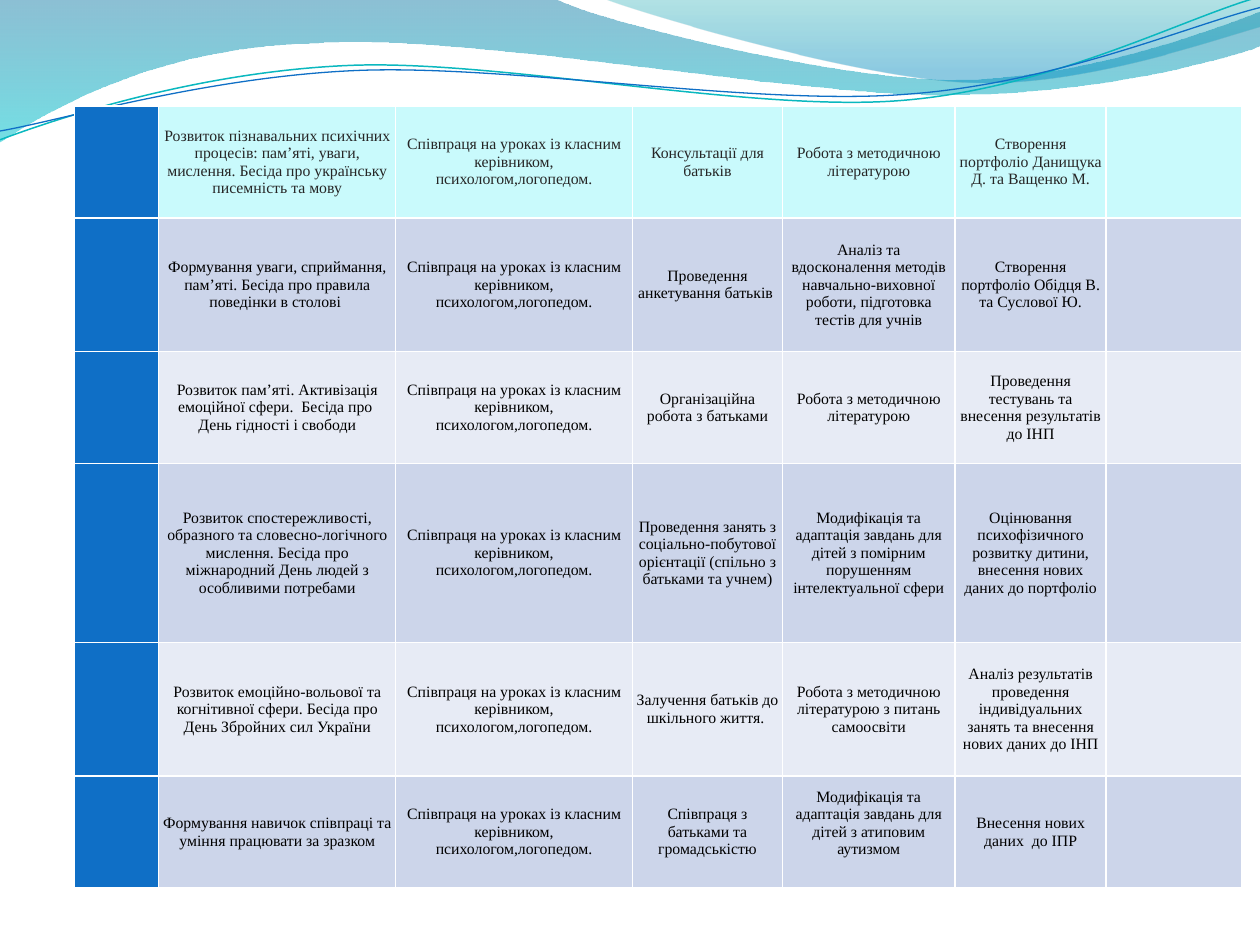
from dataclasses import dataclass
from typing import Optional

import lxml.etree
import pptx
import pptx.dml.color
import pptx.enum.text
import pptx.oxml.ns
import pptx.util

Inches = pptx.util.Inches
RGBColor = pptx.dml.color.RGBColor
qn = pptx.oxml.ns.qn
Point = tuple[float, float]

WHITE = RGBColor(0xFF, 0xFF, 0xFF)
BLACK = RGBColor(0x00, 0x00, 0x00)
DARK_GREY = RGBColor(0x26, 0x26, 0x26)
BLUE = RGBColor(0x0F, 0x6F, 0xC6)
TEAL = RGBColor(0x0A, 0xB8, 0xBF)
PALE_CYAN = RGBColor(0xC9, 0xFA, 0xFC)
BAND_DARK = RGBColor(0xCC, 0xD5, 0xEA)
BAND_LIGHT = RGBColor(0xE7, 0xEB, 0xF5)
DEEP_BLUE = RGBColor(0x00, 0x74, 0xA1)
CYAN = RGBColor(0x00, 0xC6, 0xCF)
SEA_GREEN = RGBColor(0x00, 0xA1, 0xA9)
SKY_BLUE = RGBColor(0x00, 0x8B, 0xBF)

FONT = "Times New Roman"


@dataclass
class Stop:
    position: float
    color: RGBColor
    opacity: int  # percent


@dataclass
class Wave:
    """Segments hold one point (straight) or three points (Bézier)."""
    start: Point
    segments: list[list[Point]]
    stops: Optional[list[Stop]] = None
    line_color: Optional[RGBColor] = None
    line_width: float = 0


WAVES = [
    Wave((0, 0), [
        [(4.4, -0.01)],
        [(4.76, 0.17), (6.64, 0.63), (7.58, 0.63)],
        [(8.53, 0.63), (9.58, 0.26), (10, 0.09)],
        [(10.01, 0.36)],
        [(9.83, 0.44), (8.7, 0.76), (7.46, 0.75)],
        [(6.22, 0.75), (3.82, 0.28), (2.57, 0.34)],
        [(1.29, 0.36), (0.46, 0.83), (-0.01, 1.13)],
        [(0, 0)],
    ], stops=[Stop(0, DEEP_BLUE, 45), Stop(1, CYAN, 55)]),
    Wave((4.79, -0.01), [
        [(5.09, 0.11), (6.82, 0.62), (7.69, 0.65)],
        [(8.56, 0.69), (9.61, 0.32), (10, 0.21)],
        [(10, 0)],
        [(4.79, -0.01)],
    ], stops=[Stop(0, SEA_GREEN, 30), Stop(0.8, SKY_BLUE, 45)]),
    Wave((0, 1.11), [
        [(0.48, 0.93), (1.58, 0.57), (2.77, 0.52)],
        [(3.95, 0.47), (5.93, 0.89), (7.13, 0.8)],
        [(8.33, 0.71), (9.38, 0.15), (9.98, -0.02)],
    ], line_color=TEAL, line_width=0.85),
    Wave((0, 1.04), [
        [(0.47, 0.96), (1.64, 0.61), (2.83, 0.56)],
        [(4.03, 0.51), (5.97, 0.84), (7.17, 0.75)],
        [(8.36, 0.67), (9.41, 0.21), (10, 0.06)],
    ], line_color=BLUE, line_width=0.75),
]

COLUMN_WIDTHS = [0.67, 1.88, 1.88, 1.19, 1.37, 1.2, 1.08]
ROW_HEIGHTS = [0.89, 1.06, 0.89, 1.42, 1.06, 0.89]
ROW_FILLS = [PALE_CYAN, BAND_DARK, BAND_LIGHT, BAND_DARK, BAND_LIGHT, BAND_DARK]
COOPERATION = "Співпраця на уроках із класним керівником, психологом,логопедом."

# Pupils, parents, teaching methods, records
PLAN = [
    ("Розвиток пізнавальних психічних процесів: пам’яті, уваги, мислення. "
     "Бесіда про українську писемність та мову",
     "Консультації для батьків",
     "Робота з методичною літературою",
     "Створення портфоліо Данищука Д. та Ващенко М."),
    ("Формування уваги, сприймання, пам’яті. Бесіда про правила поведінки в столові ",
     "Проведення анкетування батьків ",
     "Аналіз та вдосконалення методів навчально-виховної роботи, "
     "підготовка тестів для учнів",
     "Створення портфоліо Обідця В. та Суслової Ю."),
    ("Розвиток пам’яті. Активізація емоційної сфери.  Бесіда про  День гідності і свободи",
     "Організаційна робота з батьками",
     "Робота з методичною літературою",
     "Проведення тестувань та внесення результатів до ІНП"),
    ("Розвиток спостережливості, образного та словесно-логічного мислення. "
     "Бесіда про міжнародний День людей з особливими потребами",
     "Проведення занять з соціально-побутової орієнтації (спільно з батьками та учнем)",
     "Модифікація та адаптація завдань для дітей з помірним порушенням "
     "інтелектуальної сфери",
     "Оцінювання психофізичного розвитку дитини, внесення нових даних до портфоліо"),
    ("Розвиток емоційно-вольової та когнітивної сфери. Бесіда про День Збройних сил України",
     "Залучення батьків до шкільного життя. ",
     "Робота з методичною літературою з питань самоосвіти",
     "Аналіз результатів проведення індивідуальних занять та внесення нових даних до ІНП"),
    ("Формування навичок співпраці та уміння працювати за зразком",
     "Співпраця з батьками та громадськістю",
     "Модифікація та адаптація завдань для дітей з атиповим аутизмом",
     "Внесення нових даних  до ІПР"),
]


def bend_segments(shape: pptx.shapes.autoshape.Shape, wave: Wave) -> None:
    """Join each run of three straight steps into one Bézier segment."""
    steps = iter(list(shape._element.spPr.iter(qn("a:lnTo"))))
    for segment in wave.segments:
        first, *rest = [next(steps) for _ in segment]
        if rest:
            curve = lxml.etree.Element(qn("a:cubicBezTo"))
            first.addprevious(curve)
            for step in (first, *rest):
                curve.append(step[0])
                step.getparent().remove(step)


def draw_wave(slide: pptx.slide.Slide, wave: Wave) -> None:
    builder = slide.shapes.build_freeform(Inches(wave.start[0]), Inches(wave.start[1]))
    points = [(Inches(x), Inches(y)) for segment in wave.segments for x, y in segment]
    builder.add_line_segments(points, close=False)
    shape = builder.convert_to_shape()
    bend_segments(shape, wave)
    shape.shadow.inherit = False
    if wave.stops is None:
        shape.fill.background()
        shape.line.color.rgb = wave.line_color
        shape.line.width = pptx.util.Pt(wave.line_width)
        return
    shape.line.fill.background()
    shape.fill.gradient()
    shape.fill.gradient_angle = 270
    for gradient_stop, stop in zip(shape.fill.gradient_stops, wave.stops):
        gradient_stop.position = stop.position
        gradient_stop.color.rgb = stop.color
    colors = list(shape._element.spPr.iter(qn("a:srgbClr")))
    for color, stop in zip(colors, wave.stops):
        lxml.etree.SubElement(color, qn("a:alpha"), val=str(stop.opacity * 1000))


def set_borders(cell: pptx.table._Cell) -> None:
    properties = cell._tc.get_or_add_tcPr()
    for index, side in enumerate(["lnL", "lnR", "lnT", "lnB"]):
        border = lxml.etree.Element(qn(f"a:{side}"), w=str(pptx.util.Pt(1)))
        fill = lxml.etree.SubElement(border, qn("a:solidFill"))
        lxml.etree.SubElement(fill, qn("a:srgbClr"), val=str(WHITE))
        properties.insert(index, border)


def write_cell(cell: pptx.table._Cell, text: str, color: RGBColor) -> None:
    cell.vertical_anchor = pptx.enum.text.MSO_ANCHOR.MIDDLE
    cell.margin_left = cell.margin_right = Inches(0.03)
    cell.margin_top = cell.margin_bottom = 0
    paragraph = cell.text_frame.paragraphs[0]
    paragraph.text = text
    paragraph.alignment = pptx.enum.text.PP_ALIGN.CENTER
    font = paragraph.runs[0].font
    font.name, font.size, font.color.rgb = FONT, pptx.util.Pt(9), color


def draw_plan(slide: pptx.slide.Slide) -> None:
    plan = slide.shapes.add_table(
        len(ROW_HEIGHTS), len(COLUMN_WIDTHS), Inches(0.59), Inches(0.84),
        Inches(sum(COLUMN_WIDTHS)), Inches(sum(ROW_HEIGHTS))).table
    plan.first_row = plan.horz_banding = False
    for column, width in zip(plan.columns, COLUMN_WIDTHS):
        column.width = Inches(width)
    for index, (row, height) in enumerate(zip(plan.rows, ROW_HEIGHTS)):
        row.height = Inches(height)
        pupils, *others = PLAN[index]
        texts = ["", pupils, COOPERATION, *others, ""]
        for position, (cell, text) in enumerate(zip(row.cells, texts)):
            cell.fill.solid()
            cell.fill.fore_color.rgb = BLUE if position == 0 else ROW_FILLS[index]
            set_borders(cell)
            if text:
                write_cell(cell, text, DARK_GREY if index == 0 else BLACK)
    # The last methods entry sits slightly higher
    plan.cell(5, 4).margin_bottom = Inches(0.14)


def main() -> None:
    deck = pptx.Presentation()
    deck.slide_width, deck.slide_height = Inches(10), Inches(7.5)
    slide = deck.slides.add_slide(deck.slide_layouts[6])
    for wave in WAVES:
        draw_wave(slide, wave)
    draw_plan(slide)
    deck.save("out.pptx")


if __name__ == "__main__":
    main()
